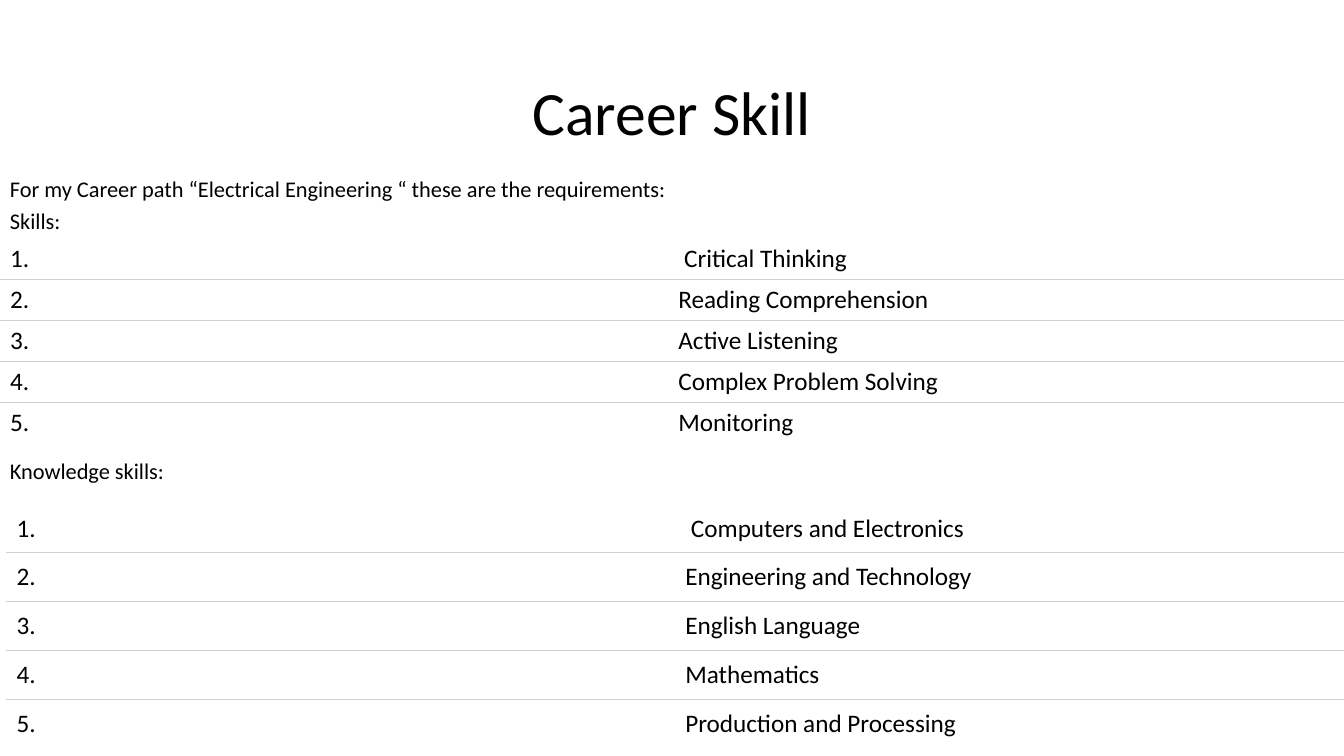
import pptx
import pptx.util
import pptx.dml.color
import pptx.enum.text
import pptx.oxml
import pptx.oxml.ns

Pt = pptx.util.Pt
RGB = pptx.dml.color.RGBColor.from_string
ANCHOR = pptx.enum.text.MSO_ANCHOR
ALIGN = pptx.enum.text.PP_ALIGN

# Content
TITLE = "Career Skill"
NOTES = [
    {"top": 121.7, "height": 50, "lines": [
        "For my Career path “Electrical Engineering “ these are the requirements:",
        "Skills:"]},
    {"top": 323.2, "height": 27, "lines": ["Knowledge skills:"]},
]
SKILL_LISTS = [
    {"left": 0, "top": 170.6, "columns": (477.4, 482.6), "row": 29.2, "skills": [
        " Critical Thinking", "Reading Comprehension", "Active Listening",
        "Complex Problem Solving", "Monitoring"]},
    {"left": 4.6, "top": 360, "columns": (477.7, 477.7), "row": 34.86, "skills": [
        " Computers and Electronics", "Engineering and Technology",
        "English Language", "Mathematics", "Production and Processing"]},
]
THEME = {"font": "Calibri", "ink": "000000", "paper": "FFFFFF", "rule": "D0D0D0",
         "title": 44, "note": 16, "skill": 18, "rule_width": 0.6}
SLIDE_WIDTH, SLIDE_HEIGHT = 960, 540


def apply(target, values):
    for name, value in values.items():
        setattr(target, name, value)


def write(paragraph, text, role):
    run = paragraph.add_run()
    run.text = text
    apply(run.font, {"name": THEME["font"], "size": Pt(THEME[role])})
    run.font.color.rgb = RGB(THEME["ink"])


def rule_cell(cell, sides):
    """Draw a thin rule on the given sides, ahead of the cell's fill."""
    properties = cell._tc.get_or_add_tcPr()
    for position, side in enumerate(sides):
        properties.insert(position, pptx.oxml.parse_xml(
            f'<a:{side} {pptx.oxml.ns.nsdecls("a")} w="{Pt(THEME["rule_width"])}">'
            f'<a:solidFill><a:srgbClr val="{THEME["rule"]}"/></a:solidFill></a:{side}>'))


def add_note(slide, note):
    box = slide.shapes.add_textbox(0, Pt(note["top"]), Pt(SLIDE_WIDTH), Pt(note["height"]))
    frame = box.text_frame
    frame.word_wrap = True
    for index, line in enumerate(note["lines"]):
        paragraph = frame.add_paragraph() if index else frame.paragraphs[0]
        paragraph.space_before = Pt(0.2 * THEME["note"] if index else 0)
        write(paragraph, line, "note")


def add_skills(slide, listing):
    skills, widths = listing["skills"], listing["columns"]
    table = slide.shapes.add_table(
        len(skills), len(widths), Pt(listing["left"]), Pt(listing["top"]),
        Pt(sum(widths)), Pt(listing["row"] * len(skills))).table
    apply(table, {"first_row": False, "horz_banding": False})
    for column, width in zip(table.columns, widths):
        column.width = Pt(width)
    for index, skill in enumerate(skills):
        table.rows[index].height = Pt(listing["row"])
        sides = (["lnT"] if index else []) + (["lnB"] if index < len(skills) - 1 else [])
        for cell, text in zip(table.rows[index].cells, (f"{index + 1}.", skill)):
            cell.vertical_anchor = ANCHOR.MIDDLE
            cell.fill.solid()
            cell.fill.fore_color.rgb = RGB(THEME["paper"])
            write(cell.text_frame.paragraphs[0], text, "skill")
            rule_cell(cell, sides)


def main():
    deck = pptx.Presentation()
    apply(deck, {"slide_width": Pt(SLIDE_WIDTH), "slide_height": Pt(SLIDE_HEIGHT)})
    slide = deck.slides.add_slide(deck.slide_layouts[5])

    # Title
    title = slide.shapes.title
    apply(title, {"left": 0, "top": 0, "width": Pt(SLIDE_WIDTH), "height": Pt(159)})
    title.text_frame.vertical_anchor = ANCHOR.MIDDLE
    heading = title.text_frame.paragraphs[0]
    heading.alignment = ALIGN.CENTER
    write(heading, TITLE, "title")

    # Section notes, then the numbered skills
    for note in NOTES:
        add_note(slide, note)
    for listing in SKILL_LISTS:
        add_skills(slide, listing)
    deck.save("out.pptx")


if __name__ == "__main__":
    main()
